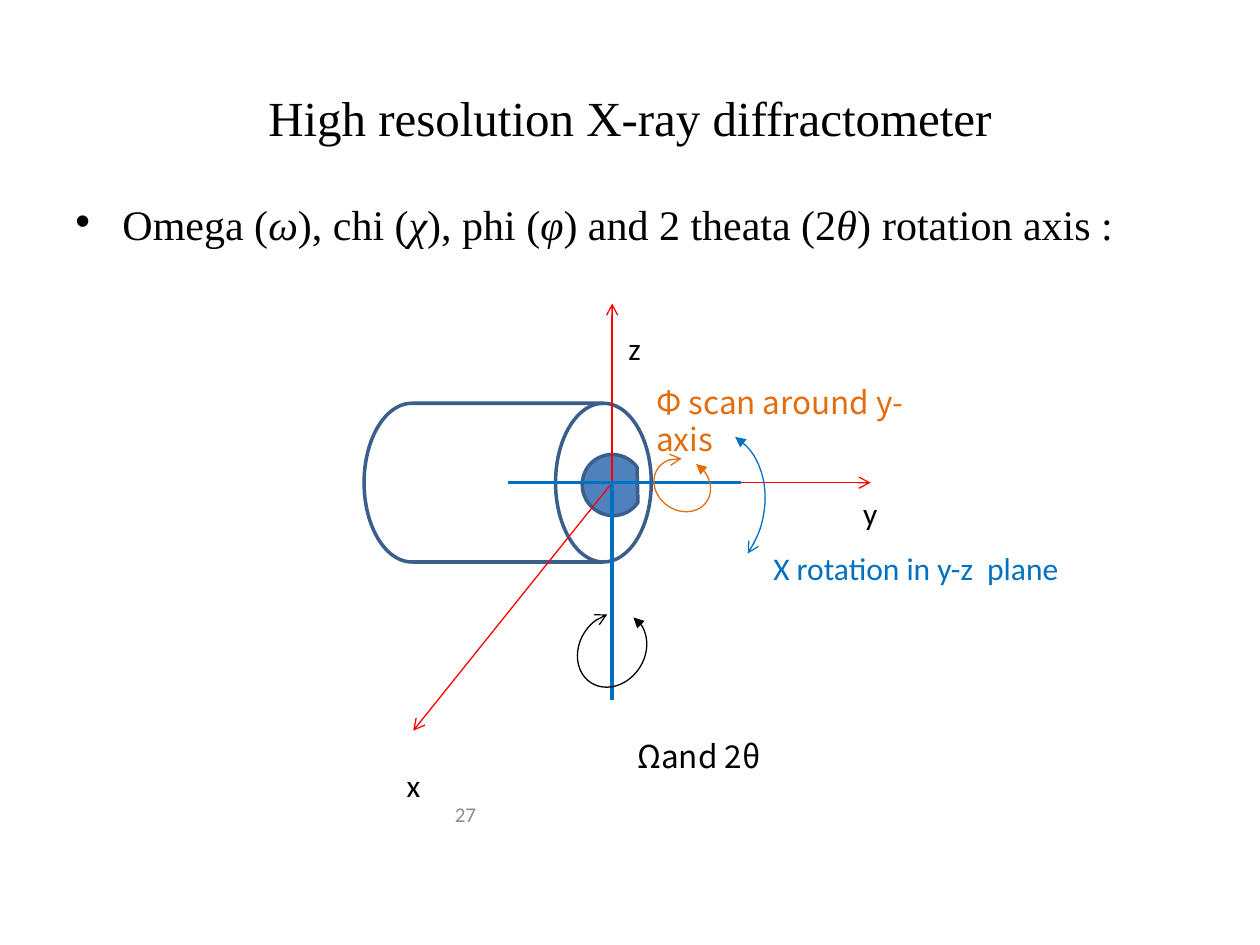
from pptx import Presentation
from pptx.dml.color import RGBColor
from pptx.enum.shapes import MSO_CONNECTOR, MSO_SHAPE
from pptx.enum.text import MSO_ANCHOR, MSO_AUTO_SIZE, PP_ALIGN
from pptx.oxml.ns import qn
from pptx.util import Cm, Pt
from lxml import etree

STRAIGHT = MSO_CONNECTOR.STRAIGHT
ARC, CHORD = MSO_SHAPE.ARC, MSO_SHAPE.CHORD
DRUM = MSO_SHAPE.FLOWCHART_DIRECT_ACCESS_STORAGE
TOP, MIDDLE = MSO_ANCHOR.TOP, MSO_ANCHOR.MIDDLE
LEFT, CENTER = PP_ALIGN.LEFT, PP_ALIGN.CENTER
FIT_SHAPE = MSO_AUTO_SIZE.SHAPE_TO_FIT_TEXT

COLORS = {
    "black": "000000", "gray": "8C8C8C", "red": "FF0000", "blue": "0070C0",
    "orange": "E46C0A", "sample": "4F81BD", "outline": "3A5F8C",
}
SERIF, SANS, GREEK = "Times New Roman", "Calibri", "Noto Sans CJK TC"
THIN, THICK = 0.75, 2
ORIGIN_X, ORIGIN_Y = 12.34, 9.73
LABEL_HEIGHT = 1.02


def rgb(name):
    return RGBColor.from_string(COLORS[name])


def style_line(line, color, width):
    line.color.rgb = rgb(color)
    line.width = Pt(width)


def add_arrowheads(shape, **ends):
    """Put arrowheads on an outline, keyed by headEnd (start) and tailEnd (end)."""
    outline = shape.line._get_or_add_ln()
    for end, kind in ends.items():
        etree.SubElement(outline, qn(f"a:{end}"), type=kind)


def add_outline(slide, preset, box, color, width, fill=None, rotation=0, angles=()):
    shape = slide.shapes.add_shape(preset, *map(Cm, box))
    shape.shadow.inherit = False
    shape.rotation = rotation
    for index, angle in enumerate(angles):
        shape.adjustments[index] = angle
    if fill:
        shape.fill.solid()
        shape.fill.fore_color.rgb = rgb(fill)
    else:
        shape.fill.background()
    style_line(shape.line, color, width)
    return shape


def add_rotation_arrow(slide, box, color, angles=()):
    arc = add_outline(slide, ARC, box, color, THIN, rotation=33.2, angles=angles)
    add_arrowheads(arc, headEnd="triangle", tailEnd="arrow")


def add_axis(slide, start, end, color, width, arrow=False):
    axis = slide.shapes.add_connector(STRAIGHT, *map(Cm, start + end))
    style_line(axis.line, color, width)
    if arrow:
        add_arrowheads(axis, tailEnd="arrow")
    etree.SubElement(axis._element.spPr, qn("a:effectLst"))


def add_run(paragraph, text, **font_format):
    color = font_format.pop("color", "black")
    run = paragraph.add_run()
    run.text = text
    run.font.color.rgb = rgb(color)
    for name, value in font_format.items():
        setattr(run.font, name, value)


def add_text_frame(slide, box, **frame_format):
    frame = slide.shapes.add_textbox(*map(Cm, box)).text_frame
    for name, value in frame_format.items():
        setattr(frame, name, value)
    return frame


def add_label(slide, text, left, top, width, font=SANS, color="black", wrap=False):
    frame = add_text_frame(slide, (left, top, width, LABEL_HEIGHT),
                           word_wrap=wrap, auto_size=FIT_SHAPE)
    add_run(frame.paragraphs[0], text, name=font, size=Pt(18), color=color)


def add_headings(slide):
    number = add_text_frame(slide, (8.92, 15.75, 5.92, 1.32),
                            word_wrap=True, vertical_anchor=MIDDLE)
    add_run(number.paragraphs[0], "27", name=SANS, size=Pt(12), color="gray")

    title = add_text_frame(slide, (1.27, 0.76, 22.86, 3.18),
                           word_wrap=True, vertical_anchor=MIDDLE)
    title.paragraphs[0].alignment = CENTER
    add_run(title.paragraphs[0], "High resolution X-ray diffractometer",
            name=SERIF, size=Pt(28))


def add_bullet_line(slide):
    frame = add_text_frame(slide, (1.27, 3.73, 23.44, 14.27),
                           word_wrap=True, vertical_anchor=TOP)
    paragraph = frame.paragraphs[0]
    paragraph.alignment = LEFT
    paragraph.space_before = Pt(5)
    properties = paragraph._p.get_or_add_pPr()
    properties.set("marL", str(Cm(0.95)))
    properties.set("indent", str(-Cm(0.95)))
    etree.SubElement(properties, qn("a:buFont"), typeface="Arial")
    etree.SubElement(properties, qn("a:buChar"), char="•")

    pieces = ["Omega (", "ω", "), chi (", "χ", "), phi (", "φ",
              ") and 2 theata (2", "θ", ")"]
    for index, piece in enumerate(pieces):
        add_run(paragraph, piece, name=SERIF, size=Pt(24), italic=index % 2 == 1)
    add_run(paragraph, " ", name=SANS, size=Pt(28))
    add_run(paragraph, "rotation axis :", name=SERIF, size=Pt(24))


def add_coordinate_axes(slide):
    for end in [(8.33, 14.73), (17.55, ORIGIN_Y), (ORIGIN_X, 6.12)]:
        add_axis(slide, (ORIGIN_X, ORIGIN_Y), end, "red", THIN, arrow=True)
    add_label(slide, "x", 7.95, 15.32, 0.79)
    add_label(slide, "y", 17.15, 9.83, 0.81)
    add_label(slide, "z", 12.42, 6.5, 0.76)


def add_rotations(slide):
    add_label(slide, "Χ rotation in y-z  plane", 15.34, 10.95, 6.35, color="blue")
    add_axis(slide, (10.24, ORIGIN_Y), (14.94, ORIGIN_Y), "blue", THICK)
    add_rotation_arrow(slide, (12.32, 8.51, 3, 3.66), "blue")

    add_axis(slide, (ORIGIN_X, ORIGIN_Y), (ORIGIN_X, 14.12), "blue", THICK)
    add_rotation_arrow(slide, (11.68, 12.32, 1.32, 1.57), "black", (162, 137.34))
    add_label(slide, "Ωand 2θ", 12.6, 14.73, 3.12, font=GREEK)

    add_rotation_arrow(slide, (13.16, 9.27, 1.19, 1.02), "orange", (162, 141.28))
    add_label(slide, "Φ scan around y-axis", 12.98, 7.59, 5.87,
              font=GREEK, color="orange", wrap=True)


def main():
    presentation = Presentation()
    presentation.slide_width, presentation.slide_height = Cm(25.4), Cm(19.05)
    slide = presentation.slides.add_slide(presentation.slide_layouts[6])
    add_outline(slide, CHORD, (11.73, 9.17, 1.24, 1.22), "outline", THICK,
                fill="sample", rotation=53.5, angles=(204.68, 162))
    add_headings(slide)
    add_bullet_line(slide)
    add_outline(slide, DRUM, (7.34, 8.13, 5.79, 3.2), "outline", THICK)
    add_coordinate_axes(slide)
    add_rotations(slide)
    presentation.save("out.pptx")


if __name__ == "__main__":
    main()
